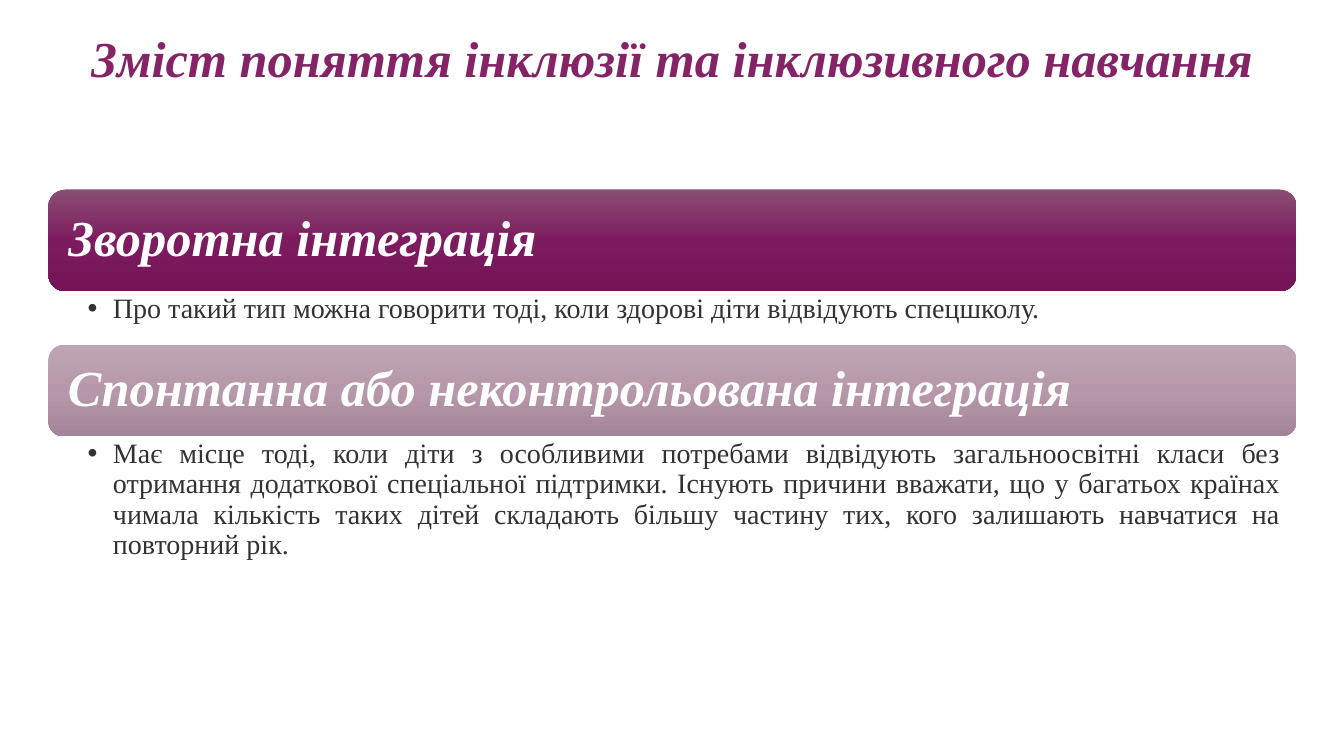
import copy

import pptx
import pptx.util
import pptx.dml.color
import pptx.enum.shapes
import pptx.enum.text
import pptx.oxml.ns

TITLE = "Зміст поняття інклюзії та інклюзивного навчання"
SECTIONS = [
    {
        "heading": "Зворотна інтеграція",
        "body": "Про такий тип можна говорити тоді, коли здорові діти відвідують спецшколу.",
        "gradient": ["dark_top", "dark_middle", "dark_bottom"],
        "top": 1.88, "bar_height": 1.01, "body_height": 1.18,
    },
    {
        "heading": "Спонтанна або неконтрольована інтеграція",
        "body": "Має місце тоді, коли діти з особливими потребами відвідують загальноосвітні "
                "класи без отримання додаткової спеціальної підтримки. Існують причини вважати, "
                "що у багатьох країнах чимала кількість таких дітей складають більшу частину "
                "тих, кого залишають навчатися на повторний рік.",
        "gradient": ["pale_top", "pale_middle", "pale_bottom"],
        "top": 3.42, "bar_height": 0.91, "body_height": 1.21,
    },
]
COLORS = {
    "title": "852367", "heading": "FFFFFF", "body": "323232",
    "dark_top": "894F73", "dark_middle": "7D1B5F", "dark_bottom": "731456",
    "pale_top": "BEA5B3", "pale_middle": "B798AA", "pale_bottom": "A48597",
}
FONT = "Times New Roman"
LEFT, WIDTH = 0.48, 12.38

Inches = pptx.util.Inches
Align = pptx.enum.text.PP_ALIGN
Anchor = pptx.enum.text.MSO_ANCHOR


def color(name):
    return pptx.dml.color.RGBColor.from_string(COLORS[name])


def place(box, top, height):
    box.left, box.top = Inches(LEFT), Inches(top)
    box.width, box.height = Inches(WIDTH), Inches(height)


def write(box, text, size, color_name, align, anchor, margins, strong):
    frame = box.text_frame
    frame.text = text
    frame.word_wrap = True
    frame.auto_size = pptx.enum.text.MSO_AUTO_SIZE.NONE
    frame.vertical_anchor = anchor
    (frame.margin_left, frame.margin_top,
     frame.margin_right, frame.margin_bottom) = map(Inches, margins)
    para = frame.paragraphs[0]
    para.alignment = align
    para.line_spacing = 0.9
    para.space_before = pptx.util.Pt(0)
    font = para.runs[0].font
    font.name, font.size = FONT, pptx.util.Pt(size)
    font.bold = font.italic = strong
    font.color.rgb = color(color_name)
    return para


def fill_gradient(shape, names):
    shape.fill.gradient()
    shape.fill.gradient_angle = 270
    stop_list = shape._element.spPr.find(".//" + pptx.oxml.ns.qn("a:gsLst"))
    stop_list.append(copy.deepcopy(stop_list[-1]))
    for number, (stop, name) in enumerate(zip(shape.fill.gradient_stops, names)):
        stop.position = number / 2
        stop.color.rgb = color(name)


def main():
    deck = pptx.Presentation()
    deck.slide_width, deck.slide_height = Inches(13.33), Inches(7.5)
    page = deck.slides.add_slide(deck.slide_layouts.get_by_name("Two Content"))

    title = page.shapes.title
    place(title, 0.28, 0.65)
    write(title, TITLE, 36, "title", Align.CENTER, Anchor.BOTTOM,
          (0.1, 0.05, 0.1, 0.05), True)

    for number, section in enumerate(SECTIONS, start=1):
        top, height = section["top"], section["bar_height"]
        bar = page.shapes.add_shape(
            pptx.enum.shapes.MSO_SHAPE.ROUNDED_RECTANGLE,
            Inches(LEFT), Inches(top), Inches(WIDTH), Inches(height))
        bar.shadow.inherit = False
        bar.line.fill.background()
        fill_gradient(bar, section["gradient"])
        write(bar, section["heading"], 36, "heading", Align.JUSTIFY, Anchor.MIDDLE,
              (0.15, 0.15, 0.15, 0.15), True)

        body = page.placeholders[number]
        place(body, top + height, section["body_height"])
        para = write(body, section["body"], 20, "body", Align.JUSTIFY, Anchor.TOP,
                     (0.39, 0.03, 0.16, 0.03), False)
        properties = para._p.get_or_add_pPr()
        properties.set("marL", str(Inches(0.25)))
        properties.set("indent", str(-Inches(0.25)))

    deck.save("out.pptx")


if __name__ == "__main__":
    main()
